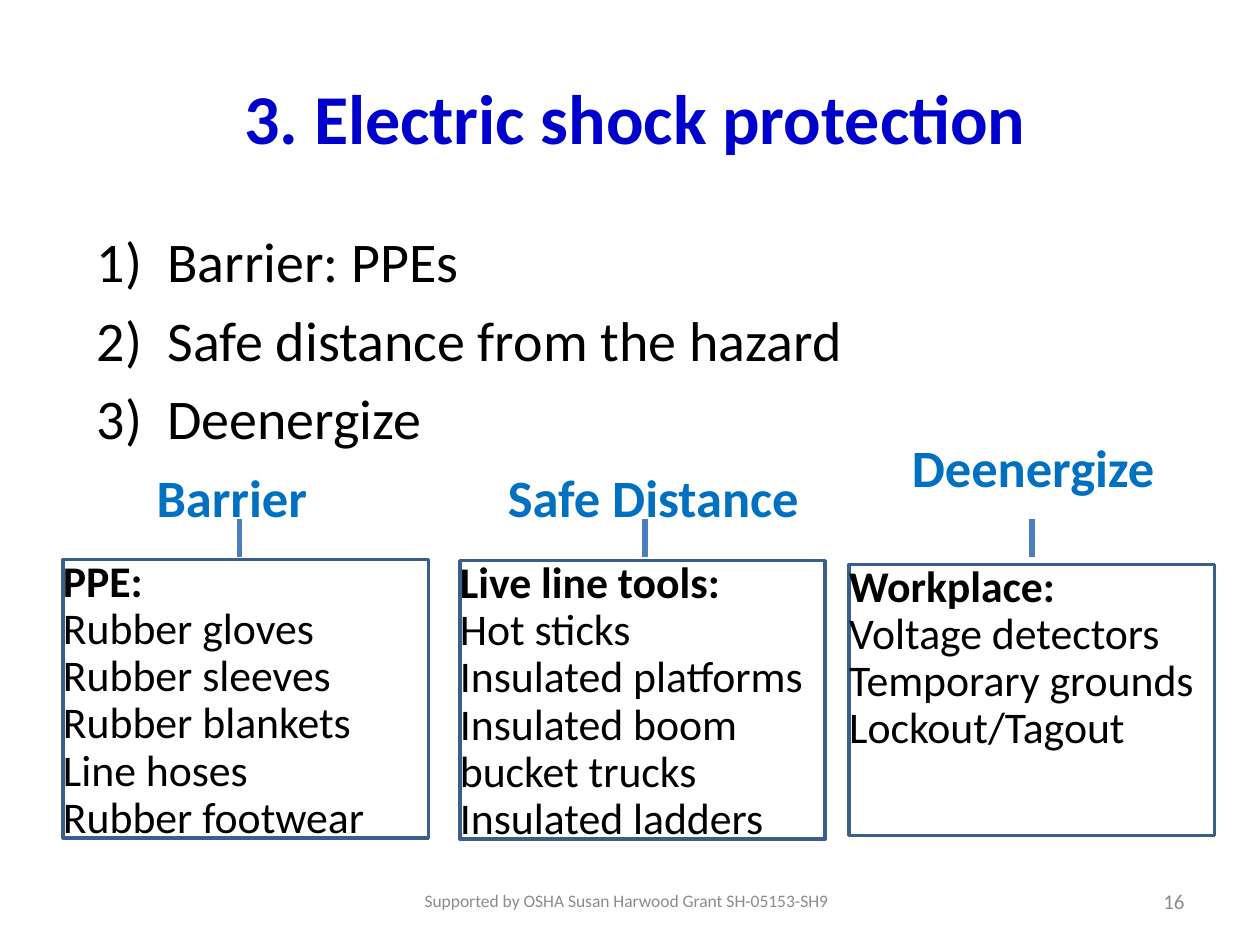
from dataclasses import dataclass

from lxml import etree
from pptx import Presentation
from pptx.dml.color import RGBColor
from pptx.enum.shapes import MSO_CONNECTOR, MSO_SHAPE
from pptx.enum.text import MSO_ANCHOR, PP_ALIGN
from pptx.oxml.ns import qn
from pptx.util import Emu, Inches, Pt

LEFT, CENTER, RIGHT = PP_ALIGN.LEFT, PP_ALIGN.CENTER, PP_ALIGN.RIGHT
TOP, MIDDLE = MSO_ANCHOR.TOP, MSO_ANCHOR.MIDDLE
RECT, STRAIGHT = MSO_SHAPE.RECTANGLE, MSO_CONNECTOR.STRAIGHT

# The slide is a grid of 100 columns by 75 rows of square cells
COLS, ROWS = 100, 75
WIDTH, HEIGHT = Inches(10), Inches(7.5)


@dataclass(frozen=True)
class Style:
    size: int
    color: str
    bold: bool = False


@dataclass(frozen=True)
class Theme:
    font: str = "Calibri"
    title: Style = Style(40, "0000CC", True)
    body: Style = Style(32, "000000")
    heading: Style = Style(30, "0070C0", True)
    card: Style = Style(25, "000000")
    footer: Style = Style(10, "8C8C8C")
    number: Style = Style(12, "8C8C8C")
    border: str = "3A5F8C"
    stem: str = "4B7EBC"


@dataclass(frozen=True)
class Box:
    col: float
    row: float
    cols: float
    rows: float


@dataclass(frozen=True)
class Method:
    heading: str
    label: Box
    card: Box
    stem_col: float
    lines: tuple[str, ...]


THEME = Theme()
STEM_TOP, STEM_BOTTOM = 41.2, 44.2
POINTS = ("Barrier: PPEs", "Safe distance from the hazard", "Deenergize")
METHODS = (
    Method("Barrier", Box(8.4, 36.1, 20, 6.7), Box(5, 44.4, 29, 22.1), 19,
           ("PPE:", "Rubber gloves", "Rubber sleeves", "Rubber blankets",
            "Line hoses", "Rubber footwear")),
    Method("Safe Distance", Box(38.7, 36.1, 26.3, 6.7),
           Box(36.5, 44.5, 29, 22.1), 51.2,
           ("Live line tools:", "Hot sticks", "Insulated platforms",
            "Insulated boom bucket trucks", "Insulated ladders")),
    Method("Deenergize", Box(72, 33.7, 20, 6.7),
           Box(67.4, 44.8, 29, 21.5), 81.9,
           ("Workplace:", "Voltage detectors", "Temporary grounds",
            "Lockout/Tagout")),
)


def x(col: float) -> Emu:
    return Emu(round(WIDTH * col / COLS))


def y(row: float) -> Emu:
    return Emu(round(HEIGHT * row / ROWS))


def place(box: Box) -> tuple[Emu, Emu, Emu, Emu]:
    return x(box.col), y(box.row), x(box.cols), y(box.rows)


def write(sp, lines: tuple[str, ...], style: Style, align=LEFT, anchor=TOP,
          flush: bool = False) -> None:
    """Fill a shape with one paragraph per line; flush drops the insets."""
    tf = sp.text_frame
    tf.word_wrap = True
    tf.vertical_anchor = anchor
    if flush:
        tf.margin_left = tf.margin_right = tf.margin_top = tf.margin_bottom = 0
    tf.text = "\n".join(lines)
    for p in tf.paragraphs:
        p.alignment = align
        for r in p.runs:
            r.font.name = THEME.font
            r.font.size = Pt(style.size)
            r.font.bold = style.bold
            r.font.color.rgb = RGBColor.from_string(style.color)


def add_text(slide, box: Box, lines: tuple[str, ...], style: Style, **layout):
    sp = slide.shapes.add_textbox(*place(box))
    write(sp, lines, style, **layout)
    return sp


def number_paragraphs(sp) -> None:
    indent = Inches(0.56)
    for p in sp.text_frame.paragraphs:
        p.space_before = Pt(THEME.body.size * 0.2)
        props = p._p.get_or_add_pPr()
        props.set("marL", str(indent))
        props.set("indent", str(-indent))
        etree.SubElement(props, qn("a:buAutoNum"), type="arabicParenR")


def add_card(slide, method: Method) -> None:
    sp = slide.shapes.add_shape(RECT, *place(method.card))
    sp.shadow.inherit = False
    sp.fill.background()
    sp.line.color.rgb = RGBColor.from_string(THEME.border)
    sp.line.width = Pt(2)
    write(sp, method.lines, THEME.card, flush=True)
    for p in sp.text_frame.paragraphs:
        p.line_spacing = 0.9
    sp.text_frame.paragraphs[0].runs[0].font.bold = True


def add_stem(slide, col: float) -> None:
    line = slide.shapes.add_connector(
        STRAIGHT, x(col), y(STEM_BOTTOM), x(col), y(STEM_TOP))
    line.line.color.rgb = RGBColor.from_string(THEME.stem)
    line.line.width = Pt(3)
    etree.SubElement(line._element.spPr, qn("a:effectLst"))


def main() -> None:
    prs = Presentation()
    prs.slide_width, prs.slide_height = WIDTH, HEIGHT
    slide = prs.slides.add_slide(prs.slide_layouts[6])

    # Title and numbered points
    add_text(slide, Box(2.5, 3, 95.8, 12.5), ("3. Electric shock protection",),
             THEME.title, align=CENTER, anchor=MIDDLE)
    number_paragraphs(
        add_text(slide, Box(6.7, 17.5, 88.3, 49.5), POINTS, THEME.body))

    # Three protection methods: heading, card and stem
    for method in METHODS:
        add_text(slide, method.label, (method.heading,), THEME.heading,
                 align=CENTER, anchor=MIDDLE, flush=True)
        add_card(slide, method)
        add_stem(slide, method.stem_col)

    # Footer and slide number
    add_text(slide, Box(31.8, 69.5, 35.8, 4),
             ("Supported by OSHA Susan Harwood Grant SH-05153-SH9",),
             THEME.footer, align=CENTER, anchor=MIDDLE)
    add_text(slide, Box(71.7, 69.5, 23.3, 4), ("16",), THEME.number,
             align=RIGHT, anchor=MIDDLE)

    prs.save("out.pptx")


if __name__ == "__main__":
    main()
